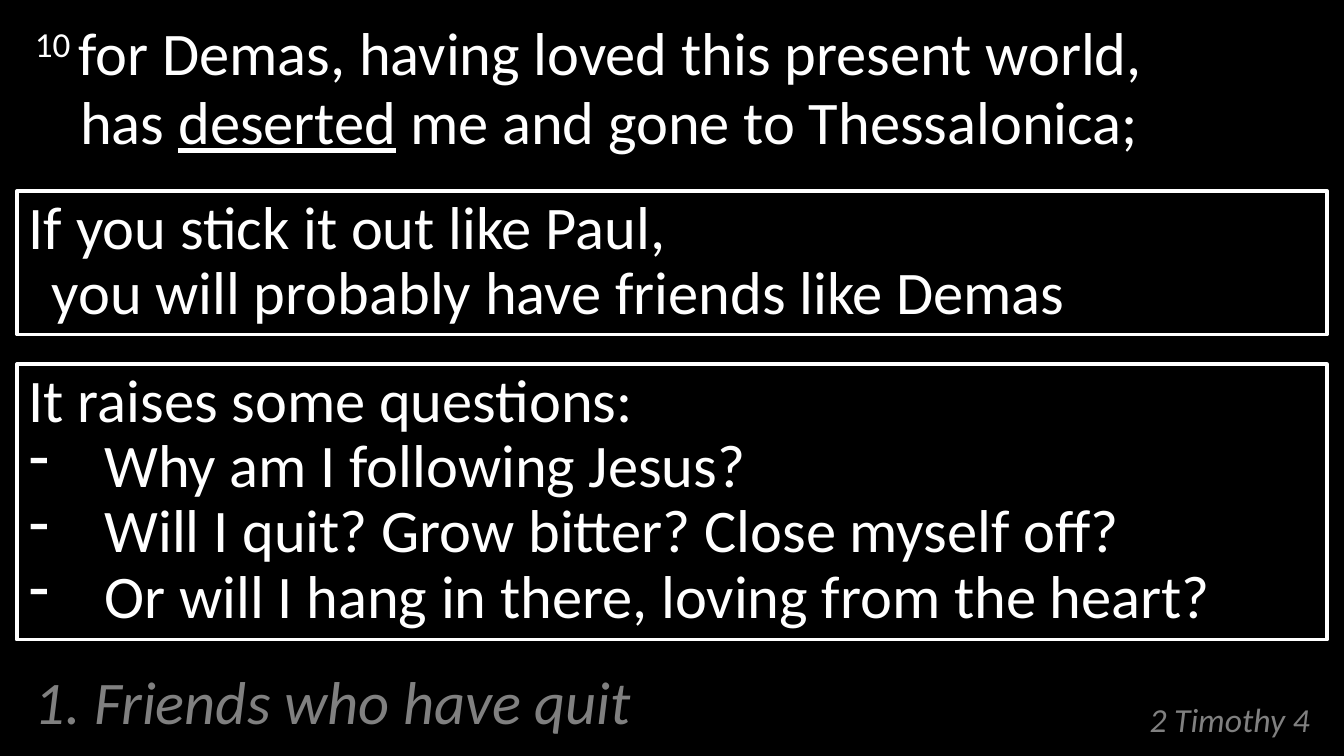
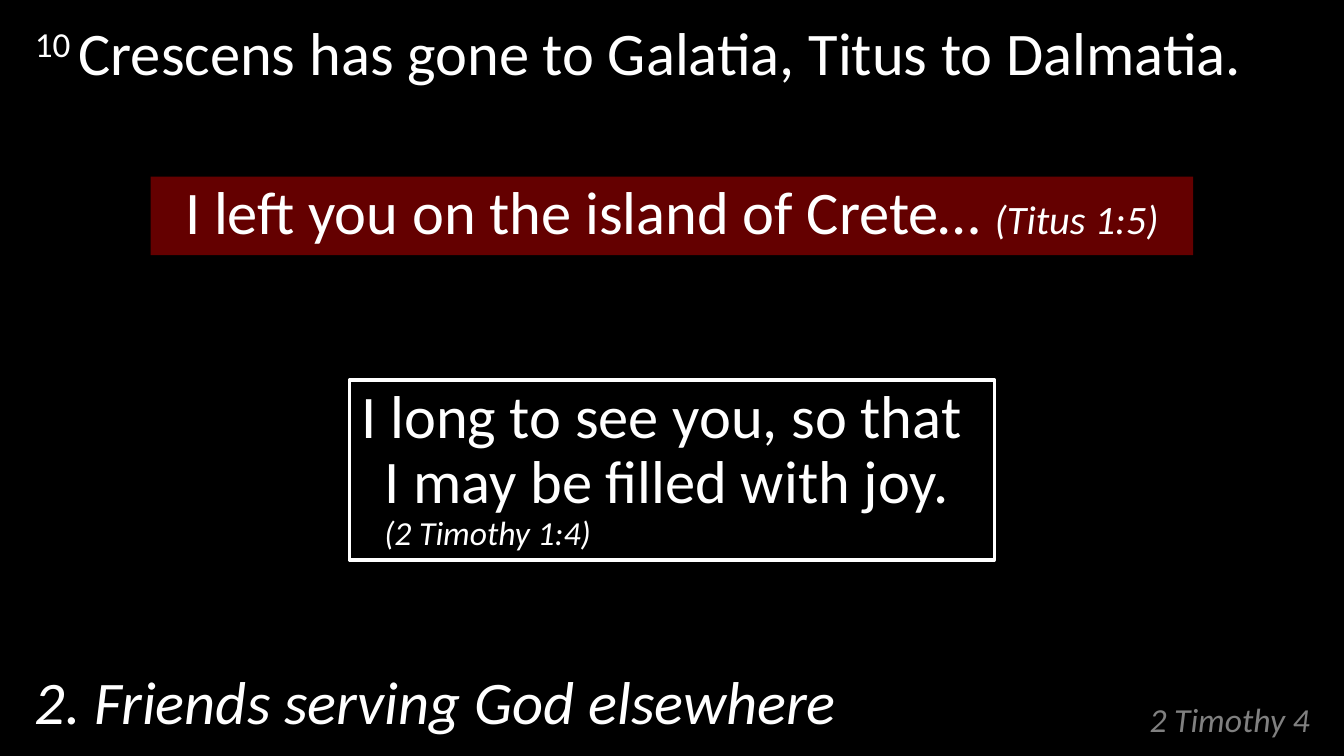
"""Build two sermon slides on 2 Timothy 4 with verses, callout boxes and headings."""
from dataclasses import dataclass

from lxml import etree
from pptx import Presentation
from pptx.dml.color import RGBColor
from pptx.enum.shapes import MSO_SHAPE
from pptx.enum.text import MSO_ANCHOR, MSO_AUTO_SIZE, PP_ALIGN
from pptx.oxml.ns import qn
from pptx.util import Cm, Pt

ROUNDED = MSO_SHAPE.ROUNDED_RECTANGLE
TOP, BOTTOM = MSO_ANCHOR.TOP, MSO_ANCHOR.BOTTOM
FIXED, GROW = MSO_AUTO_SIZE.NONE, MSO_AUTO_SIZE.SHAPE_TO_FIT_TEXT
LEFT, CENTER, RIGHT = PP_ALIGN.LEFT, PP_ALIGN.CENTER, PP_ALIGN.RIGHT

COLORS = {"black": "000000", "white": "FFFFFF", "gray": "808080", "red": "640000"}
FONT = "Calibri"
SLIDE_WIDTH, SLIDE_HEIGHT = 28.22, 15.88
TWO_CONTENT = 3
FULL_WIDTH = 27.51
BOX_INDENT, LIST_INDENT, VERSE_INDENT = 0.48, 1.59, 0.95
PLACEHOLDERS = {
    0: (17.93, 14.12, 9.83, 1.52, BOTTOM),
    1: (0.48, 0.3, 27.28, 13.44, TOP),
    2: (0.48, 14.12, 20.62, 1.52, BOTTOM),
}


@dataclass
class Span:
    text: str
    size: int = 36
    color: str = "white"
    italic: bool = False
    underline: bool = False
    raised: bool = False


@dataclass
class Line:
    spans: list[Span]
    indent: float = BOX_INDENT
    spacing: float = 0.9
    align: PP_ALIGN = LEFT
    bullet: str = ""


@dataclass
class Callout:
    top: float
    width: float
    height: float
    lines: list[Line]
    fill: str = "black"
    outlined: bool = True


@dataclass
class Page:
    verse: list[Span]
    heading: Span
    callouts: list[Callout]


VERSE_NUMBER = Span("10 ", raised=True)
REFERENCE = Line([Span("2 Timothy 4", 20, "gray", italic=True)], 0, 0.8, RIGHT)
QUESTIONS = [
    "Why am I following Jesus?",
    "Will I quit? Grow bitter? Close myself off?",
    "Or will I hang in there, loving from the heart?",
]
PAGES = [
    Page(
        [
            VERSE_NUMBER,
            Span("for Demas, having loved this present world, \nhas "),
            Span("deserted", underline=True),
            Span(" me and gone to Thessalonica;"),
        ],
        Span("1. Friends who have quit", color="gray", italic=True),
        [
            Callout(4.01, FULL_WIDTH, 3.02, [
                Line([Span("If you stick it out like Paul, \n"
                           "you will probably have friends like Demas")]),
            ]),
            Callout(7.65, FULL_WIDTH, 5.79, [
                Line([Span("It raises some questions:")]),
                *[Line([Span(question)], LIST_INDENT, bullet="-")
                  for question in QUESTIONS],
            ]),
        ],
    ),
    Page(
        [VERSE_NUMBER, Span("Crescens has gone to Galatia, Titus to Dalmatia.")],
        Span("2. Friends serving God elsewhere", italic=True),
        [
            Callout(3.71, 21.89, 1.65, [
                Line([Span("I left you on the island of Crete… "),
                      Span("(Titus 1:5)", 24, italic=True)], align=CENTER),
            ], fill="red", outlined=False),
            Callout(7.98, 13.54, 3.78, [
                Line([Span("I long to see you, so that I may be filled with joy. \n"),
                      Span("(2 Timothy 1:4)", 20, italic=True)]),
            ]),
        ],
    ),
]


def color(name: str) -> RGBColor:
    return RGBColor.from_string(COLORS[name])


def write_span(paragraph, span: Span) -> None:
    formats = {"name": FONT, "size": Pt(span.size), "italic": span.italic,
               "underline": span.underline}
    for number, text in enumerate(span.text.split("\n")):
        if number:
            paragraph.add_line_break()
        if not text:
            continue
        run = paragraph.add_run()
        run.text = text
        for attribute, value in formats.items():
            setattr(run.font, attribute, value)
        run.font.color.rgb = color(span.color)
        if span.raised:
            run._r.get_or_add_rPr().set("baseline", "30000")


def write_lines(frame, lines: list[Line]) -> None:
    for number, line in enumerate(lines):
        paragraph = frame.add_paragraph() if number else frame.paragraphs[0]
        paragraph.alignment = line.align
        paragraph.line_spacing = line.spacing
        properties = paragraph._p.get_or_add_pPr()
        properties.set("marL", str(Cm(line.indent)))
        properties.set("indent", str(-Cm(line.indent)))
        if line.bullet:
            etree.SubElement(properties, qn("a:buChar"), char=line.bullet)
        else:
            etree.SubElement(properties, qn("a:buNone"))
        for span in line.spans:
            write_span(paragraph, span)


def style_layout(deck):
    background = deck.slide_master.background.fill
    background.solid()
    background.fore_color.rgb = color("black")
    layout = deck.slide_layouts[TWO_CONTENT]
    for holder in layout.placeholders:
        index = holder.placeholder_format.idx
        if index in PLACEHOLDERS:
            *place, anchor = PLACEHOLDERS[index]
            holder.left, holder.top, holder.width, holder.height = map(Cm, place)
            holder.text_frame.vertical_anchor = anchor
            holder.text_frame.auto_size = FIXED
    return layout


def draw_callout(slide, callout: Callout) -> None:
    left = (SLIDE_WIDTH - callout.width) / 2
    box = slide.shapes.add_shape(ROUNDED, Cm(left), Cm(callout.top),
                                 Cm(callout.width), Cm(callout.height))
    box.adjustments[0] = 0
    box.shadow.inherit = False
    box.fill.solid()
    box.fill.fore_color.rgb = color(callout.fill)
    if callout.outlined:
        box.line.color.rgb = color("white")
        box.line.width = Pt(2)
    else:
        box.line.fill.background()
    frame = box.text_frame
    formats = {"word_wrap": True, "auto_size": GROW, "vertical_anchor": TOP}
    for attribute, value in formats.items():
        setattr(frame, attribute, value)
    write_lines(frame, callout.lines)


def draw_page(deck, layout, page: Page) -> None:
    slide = deck.slides.add_slide(layout)
    texts = [REFERENCE, Line(page.verse, VERSE_INDENT, 0.95),
             Line([page.heading], VERSE_INDENT, 0.95)]
    for holder, line in zip(slide.placeholders, texts):
        write_lines(holder.text_frame, [line])
    for callout in page.callouts:
        draw_callout(slide, callout)


def main() -> None:
    deck = Presentation()
    deck.slide_width, deck.slide_height = Cm(SLIDE_WIDTH), Cm(SLIDE_HEIGHT)
    layout = style_layout(deck)
    for page in PAGES:
        draw_page(deck, layout, page)
    deck.save("out.pptx")


if __name__ == "__main__":
    main()
